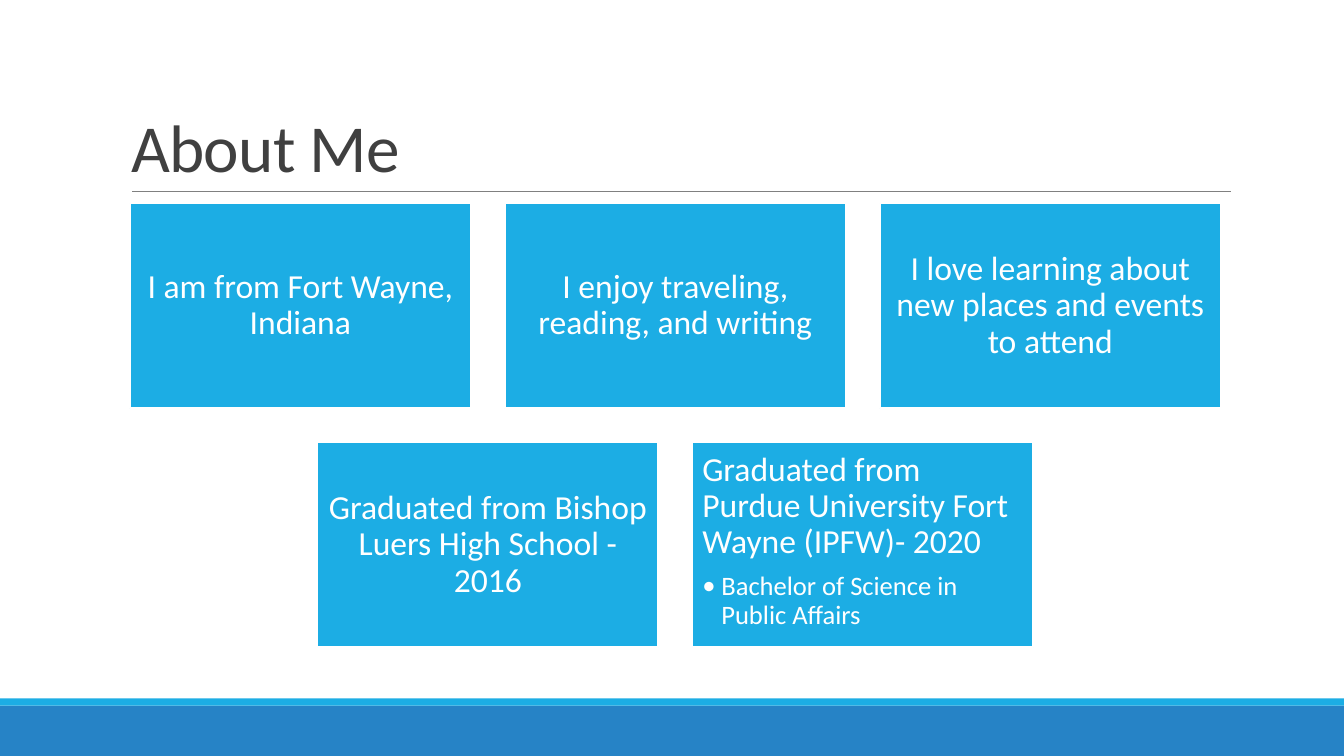
from pptx import Presentation
from pptx.dml.color import RGBColor
from pptx.enum.shapes import MSO_CONNECTOR as Connector, MSO_SHAPE as Shape
from pptx.enum.text import MSO_ANCHOR as Anchor, PP_ALIGN as Align
from pptx.oxml.ns import qn
from pptx.util import Cm, Pt
from lxml.etree import SubElement

# Content
TITLE = "About Me"
CARD_ROWS = [
    [
        ["I am from Fort Wayne, Indiana"],
        ["I enjoy traveling, reading, and writing"],
        ["I love learning about new places and events to attend"],
    ],
    [
        ["Graduated from Bishop Luers High School - 2016"],
        ["Graduated from Purdue University Fort Wayne (IPFW)- 2020",
         "Bachelor of Science in Public Affairs"],
    ],
]

# Colours and measures in centimetres
BLUE, DEEP_BLUE, GREY, DARK, WHITE = "1CADE4", "2683C6", "808080", "404040", "FFFFFF"
SLIDE_W, SLIDE_H = 33.87, 19.05
CARD_W, CARD_H, GAP = 8.59, 5.16, 0.86
CARDS_CENTER, CARDS_TOP = 17.02, 5.13
FOOTER_BANDS = [(17.78, 1.27, DEEP_BLUE), (17.6, 0.18, BLUE)]


def color(hex_string):
    return RGBColor.from_string(hex_string)


def write(paragraph, text, size=24, fill=WHITE, align=Align.LEFT, spacing=0.9,
          after=0, bullet=False, tracking=None):
    if bullet:
        props = paragraph._p.get_or_add_pPr()
        props.set("marL", str(Cm(0.48)))
        props.set("indent", str(Cm(-0.48)))
        SubElement(props, qn("a:buFont")).set("typeface", "Calibri")
        SubElement(props, qn("a:buChar")).set("char", "•")
    paragraph.alignment = align
    paragraph.line_spacing = spacing
    paragraph.space_before, paragraph.space_after = Pt(0), Pt(after)
    run = paragraph.add_run()
    run.text = text
    run.font.name, run.font.size = "Calibri", Pt(size)
    run.font.color.rgb = color(fill)
    if tracking is not None:
        run._r.get_or_add_rPr().set("spc", str(tracking))


def add_block(left, top, width, height, fill, outline=None):
    block = slide.shapes.add_shape(Shape.RECTANGLE, Cm(left), Cm(top), Cm(width), Cm(height))
    block.shadow.inherit = False
    block.fill.solid()
    block.fill.fore_color.rgb = color(fill)
    if outline:
        block.line.color.rgb = color(outline)
        block.line.width = Pt(1.25)
    else:
        block.line.fill.background()
    return block


def add_card(left, top, lines):
    frame = add_block(left, top, CARD_W, CARD_H, BLUE, WHITE).text_frame
    frame.word_wrap = True
    frame.margin_left = frame.margin_right = frame.margin_top = frame.margin_bottom = Cm(0.25)
    heading, *details = lines
    frame.vertical_anchor = Anchor.TOP if details else Anchor.MIDDLE
    write(frame.paragraphs[0], heading, align=Align.LEFT if details else Align.CENTER,
          after=8 if details else 0)
    for detail in details:
        write(frame.add_paragraph(), detail, size=19, bullet=True)


deck = Presentation()
deck.slide_width, deck.slide_height = Cm(SLIDE_W), Cm(SLIDE_H)
slide = deck.slides.add_slide(deck.slide_layouts[5])

# Footer bands
for band_top, band_height, band_fill in FOOTER_BANDS:
    add_block(0, band_top, SLIDE_W, band_height, band_fill)

# Title and the rule under it
title = slide.shapes.title
title.left, title.top, title.width, title.height = Cm(3.05), Cm(0.79), Cm(27.94), Cm(4.04)
title.text_frame.vertical_anchor = Anchor.BOTTOM
write(title.text_frame.paragraphs[0], TITLE, size=48, fill=DARK, spacing=0.85, tracking=-50)

rule = slide.shapes.add_connector(Connector.STRAIGHT, Cm(3.33), Cm(4.83), Cm(31.01), Cm(4.83))
rule.line.color.rgb = color(GREY)
rule.line.width = Pt(0.5)
SubElement(rule._element.spPr, qn("a:effectLst"))

# Cards, each row centred
for row_index, cards in enumerate(CARD_ROWS):
    row_width = len(cards) * (CARD_W + GAP) - GAP
    for column, card_lines in enumerate(cards):
        add_card(CARDS_CENTER - row_width / 2 + column * (CARD_W + GAP),
                 CARDS_TOP + row_index * (CARD_H + GAP), card_lines)

deck.save("out.pptx")
